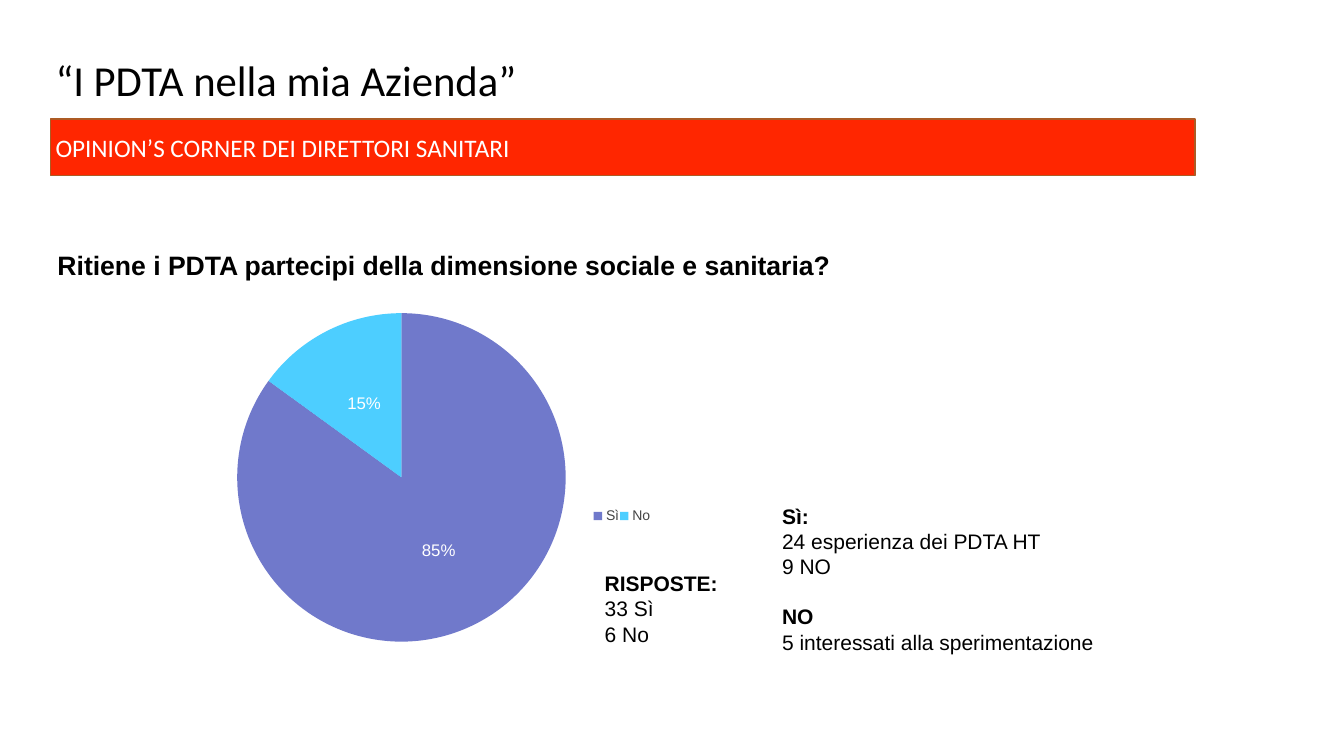
"""Build the survey slide on care pathways and their social dimension."""
import lxml.etree
import pptx
import pptx.chart.data
import pptx.dml.color
import pptx.enum.chart
import pptx.enum.shapes
import pptx.enum.text
import pptx.oxml
import pptx.oxml.ns
import pptx.util
from pptx.util import Cm

COLOURS = {
    "ink": "000000", "paper": "FFFFFF", "banner": "FF2600",
    "banner_edge": "AD5B24", "yes": "5862C2", "no": "2EC6FF", "legend": "444444",
}
INSET = Cm(0.13)
FRAME_FORMAT = {
    "word_wrap": True, "margin_left": INSET, "margin_right": INSET,
    "margin_top": INSET, "margin_bottom": INSET,
}
TITLE = {"size": 30.5, "name": "Calibri"}
BANNER = {"size": 18, "name": "Calibri", "colour": "paper"}
QUESTION = {"size": 19, "bold": True}
HEADING = {"size": 15, "bold": True}
ANSWER = {"size": 15}
SHARE = {"size": 12, "colour": "paper"}
LEGEND = {"size": 10, "colour": "legend"}


def colour(key):
    """Return the named colour."""
    return pptx.dml.color.RGBColor.from_string(COLOURS[key])


def apply(target, formats):
    """Set every attribute in formats on the target."""
    for attribute, value in formats.items():
        setattr(target, attribute, value)


def style_font(font, size, name="Arial", bold=False, colour_key="ink"):
    """Give a font its size, face, weight and colour."""
    apply(font, {"size": pptx.util.Pt(size), "name": name, "bold": bold})
    font.color.rgb = colour(colour_key)


def style(font, look):
    """Apply one of the named text looks."""
    values = {("colour_key" if key == "colour" else key): value for key, value in look.items()}
    style_font(font, **values)


def write(frame, lines, anchor=pptx.enum.text.MSO_ANCHOR.TOP):
    """Fill a text frame with (text, look, space before) lines."""
    apply(frame, {**FRAME_FORMAT, "vertical_anchor": anchor})
    for index, (text, look, gap) in enumerate(lines):
        paragraph = frame.add_paragraph() if index else frame.paragraphs[0]
        paragraph.alignment = pptx.enum.text.PP_ALIGN.LEFT
        paragraph.space_before = pptx.util.Pt(gap)
        run = paragraph.add_run()
        run.text = text
        style(run.font, look)
    return frame


def add_text(slide, box, lines, **options):
    """Add a text box."""
    return write(slide.shapes.add_textbox(*map(Cm, box)).text_frame, lines, **options)


def add_banner(slide, box, text):
    """Add the coloured banner with its caption."""
    banner = slide.shapes.add_shape(pptx.enum.shapes.MSO_SHAPE.RECTANGLE, *map(Cm, box))
    banner.shadow.inherit = False
    banner.fill.solid()
    banner.fill.fore_color.rgb = colour("banner")
    banner.line.color.rgb = colour("banner_edge")
    banner.line.width = pptx.util.Pt(1)
    write(banner.text_frame, [(text, BANNER, 0)], anchor=pptx.enum.text.MSO_ANCHOR.MIDDLE)


def layout_xml(x, y, w, h, inner=False):
    """Return a manual chart layout in fractions of the chart."""
    target = '<c:layoutTarget val="inner"/>' if inner else ""
    modes = "".join(f'<c:{axis}Mode val="edge"/>' for axis in "xy")
    sizes = "".join(f'<c:{key} val="{value}"/>' for key, value in zip("xywh", (x, y, w, h)))
    return pptx.oxml.parse_xml(
        f'<c:layout {pptx.oxml.ns.nsdecls("c")}><c:manualLayout>'
        f"{target}{modes}{sizes}</c:manualLayout></c:layout>")


def place(parent, layout, after=None):
    """Put a manual layout into a chart part in place of any other."""
    for old in parent.findall(pptx.oxml.ns.qn("c:layout")):
        parent.remove(old)
    position = 0 if after is None else parent.index(parent.find(pptx.oxml.ns.qn(after))) + 1
    parent.insert(position, layout)


def colour_slice(point, key):
    """Fill a slice with a slightly transparent colour."""
    point.format.fill.solid()
    point.format.fill.fore_color.rgb = colour(key)
    point.format.line.fill.background()
    for swatch in point.format.fill._xPr.iter(pptx.oxml.ns.qn("a:srgbClr")):
        lxml.etree.SubElement(swatch, pptx.oxml.ns.qn("a:alpha")).set("val", "85000")


def add_answer_pie(slide, box, shares):
    """Add the pie of answers with percentages and a legend."""
    data = pptx.chart.data.CategoryChartData()
    data.categories = list(shares)
    data.add_series("Risposte", [share for share, _ in shares.values()])
    chart = slide.shapes.add_chart(
        pptx.enum.chart.XL_CHART_TYPE.PIE, *map(Cm, box), data).chart
    apply(chart, {"has_title": False, "has_legend": True})
    style(chart.font, {"size": 10})
    apply(chart.legend, {
        "position": pptx.enum.chart.XL_LEGEND_POSITION.RIGHT, "include_in_layout": True})
    style(chart.legend.font, LEGEND)
    pie = chart.plots[0]
    apply(pie, {"vary_by_categories": True, "has_data_labels": True})
    apply(pie.data_labels, {
        "show_percentage": True, "show_value": False, "number_format": "0%",
        "number_format_is_linked": False,
        "position": pptx.enum.chart.XL_LABEL_POSITION.CENTER})
    style(pie.data_labels.font, SHARE)
    for index, (_, key) in enumerate(shares.values()):
        colour_slice(pie.series[0].points[index], key)
    plot_area = chart._chartSpace.chart.plotArea
    place(plot_area, layout_xml(0.005, 0.005, 0.796, 0.988, inner=True))
    place(chart.legend._element, layout_xml(0.86, 0.58, 0.14, 0.07), after="c:legendPos")


def main():
    """Build and save the slide."""
    deck = pptx.Presentation()
    apply(deck, {"slide_width": Cm(33.87), "slide_height": Cm(19.05)})
    slide = deck.slides.add_slide(deck.slide_layouts[6])
    title = add_text(slide, (1.27, 1.37, 23.7, 1.42), [("“I PDTA nella mia Azienda”", TITLE, 0)],
                     anchor=pptx.enum.text.MSO_ANCHOR.MIDDLE)
    title.paragraphs[0].line_spacing = 0.9
    add_banner(slide, (1.27, 3, 28.85, 1.42), "OPINION’S CORNER DEI DIRETTORI SANITARI")
    add_text(slide, (1.32, 6.15, 22.25, 1.02), [
        ("Ritiene i PDTA partecipi della dimensione sociale e sanitaria?", QUESTION, 0)])
    add_answer_pie(slide, (5.87, 7.85, 10.54, 8.38), {"Sì": (85, "yes"), "No": (15, "no")})
    add_text(slide, (15.11, 14.25, 3.28, 2.64), [
        ("RISPOSTE:", HEADING, 0), ("33 Sì", ANSWER, 0), ("6 No", ANSWER, 0)])
    add_text(slide, (19.58, 12.55, 12.8, 3.84), [
        ("Sì:", HEADING, 0),
        ("24 esperienza dei PDTA HT", ANSWER, 0),
        ("9 NO", ANSWER, 0),
        ("NO", HEADING, 18),
        ("5 interessati alla sperimentazione", ANSWER, 0)])
    deck.save("out.pptx")


if __name__ == "__main__":
    main()
